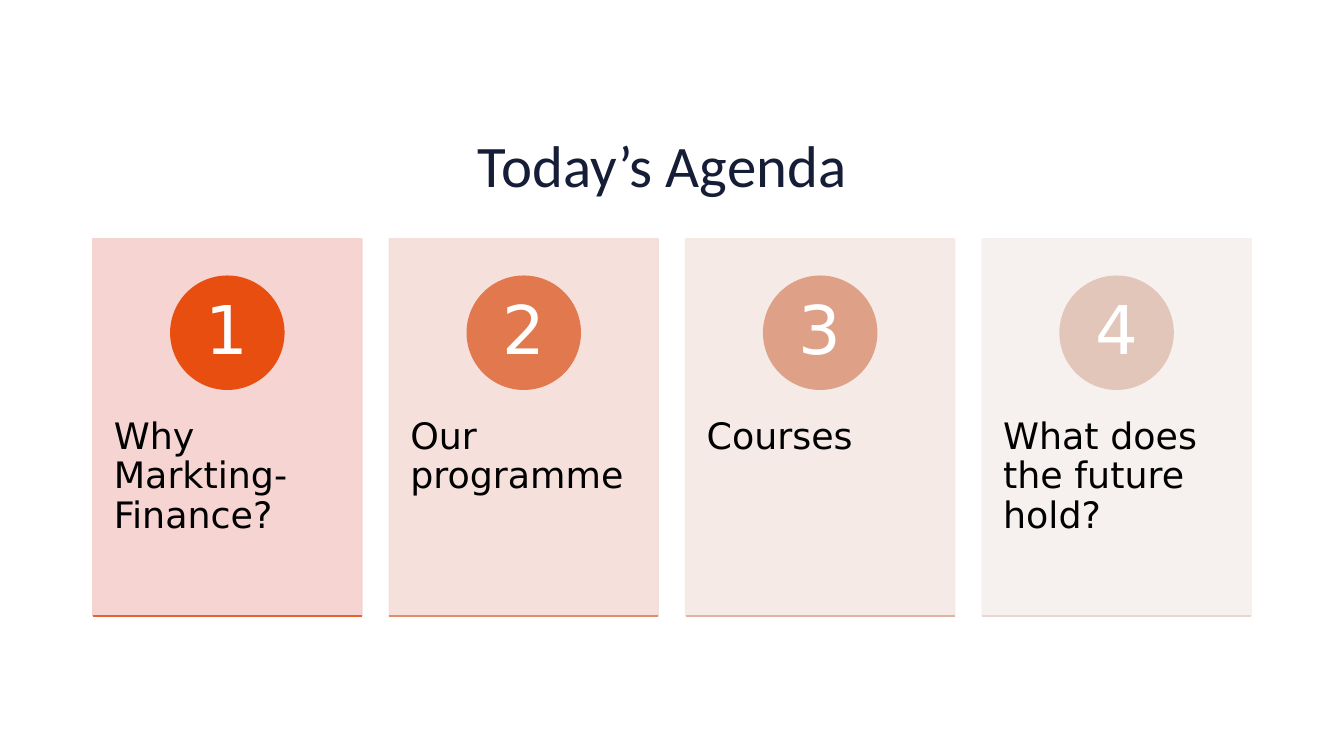
from dataclasses import dataclass

from lxml import etree
from pptx import Presentation
from pptx.dml.color import RGBColor
from pptx.enum.shapes import MSO_CONNECTOR, MSO_SHAPE
from pptx.enum.text import MSO_ANCHOR, PP_ALIGN
from pptx.oxml.ns import qn
from pptx.shapes.autoshape import Shape
from pptx.slide import Slide
from pptx.util import Cm, Pt

RECT, OVAL = MSO_SHAPE.RECTANGLE, MSO_SHAPE.OVAL
STRAIGHT = MSO_CONNECTOR.STRAIGHT
TOP, MIDDLE = MSO_ANCHOR.TOP, MSO_ANCHOR.MIDDLE
LEFT, CENTER = PP_ALIGN.LEFT, PP_ALIGN.CENTER


@dataclass(frozen=True)
class Theme:
    head_font: str = "Calibri"
    font: str = "DejaVu Sans"
    head_size: int = 42
    num_size: int = 48
    body_size: int = 26
    navy: str = "151D37"
    black: str = "000000"
    white: str = "FFFFFF"
    alpha: int = 90


@dataclass(frozen=True)
class Item:
    text: str
    card: str
    disc: str
    rule: str


THEME = Theme()
ITEMS = [
    Item("Why Markting-Finance?", "F6D0CC", "E84E10", "E7622C"),
    Item("Our programme", "F5DDD9", "E2784D", "DF8D6B"),
    Item("Courses", "F5E8E4", "DEA188", "DFB4A2"),
    Item("What does the future hold?", "F6F0EE", "E3C6BA", "E8D7D0"),
]

START, STEP = Cm(2.34), Cm(7.47)
CARD_TOP, CARD_W, CARD_H = Cm(6.02), Cm(6.78), Cm(9.5)
DISC_TOP, DISC = Cm(6.96), Cm(2.85)


def paint(shape: Shape, color: str) -> None:
    shape.shadow.inherit = False
    shape.fill.solid()
    shape.fill.fore_color.rgb = RGBColor.from_string(color)
    shape.line.color.rgb = RGBColor.from_string(color)
    shape.line.width = Pt(1)


def fade(shape: Shape, percent: int) -> None:
    for color in shape._element.spPr.iter(qn("a:srgbClr")):
        etree.SubElement(color, qn("a:alpha")).set("val", str(percent * 1000))


def write(shape: Shape, text: str, font: str, size: int, color: str,
          align: PP_ALIGN, anchor: MSO_ANCHOR, pads: tuple) -> None:
    frame = shape.text_frame
    frame.word_wrap = True
    frame.vertical_anchor = anchor
    (frame.margin_left, frame.margin_top,
     frame.margin_right, frame.margin_bottom) = map(Cm, pads)
    frame.text = text
    para = frame.paragraphs[0]
    para.alignment = align
    para.line_spacing = 0.9
    para.space_before = Pt(0)
    para.font.name = font
    para.font.size = Pt(size)
    para.font.color.rgb = RGBColor.from_string(color)


def draw_title(slide: Slide, text: str) -> None:
    title = slide.shapes.title
    title.left, title.top = Cm(2.08), Cm(3.45)
    title.width, title.height = Cm(29.21), Cm(3.68)
    write(title, text, THEME.head_font, THEME.head_size, THEME.navy,
          CENTER, TOP, (0, 0, 0, 0))


def draw_item(slide: Slide, index: int, item: Item) -> None:
    left = START + index * STEP
    card = slide.shapes.add_shape(RECT, left, CARD_TOP, CARD_W, CARD_H)
    paint(card, item.card)
    fade(card, THEME.alpha)
    write(card, item.text, THEME.font, THEME.body_size, THEME.black,
          LEFT, TOP, (0.53, 4.52, 0.53, 0.91))

    disc = slide.shapes.add_shape(
        OVAL, left + (CARD_W - DISC) // 2, DISC_TOP, DISC, DISC)
    paint(disc, item.disc)
    write(disc, str(index + 1), THEME.font, THEME.num_size, THEME.white,
          CENTER, MIDDLE, (0.23, 0.03, 0.23, 0.03))

    base = CARD_TOP + CARD_H
    rule = slide.shapes.add_connector(
        STRAIGHT, left, base, left + CARD_W, base)
    rule.line.color.rgb = RGBColor.from_string(item.rule)
    rule.line.width = Pt(1)
    etree.SubElement(rule._element.spPr, qn("a:effectLst"))


def main() -> None:
    deck = Presentation()
    deck.slide_width, deck.slide_height = Cm(33.87), Cm(19.05)
    slide = deck.slides.add_slide(deck.slide_layouts[5])
    draw_title(slide, "Today’s Agenda")
    for index, item in enumerate(ITEMS):
        draw_item(slide, index, item)
    deck.save("out.pptx")


if __name__ == "__main__":
    main()
